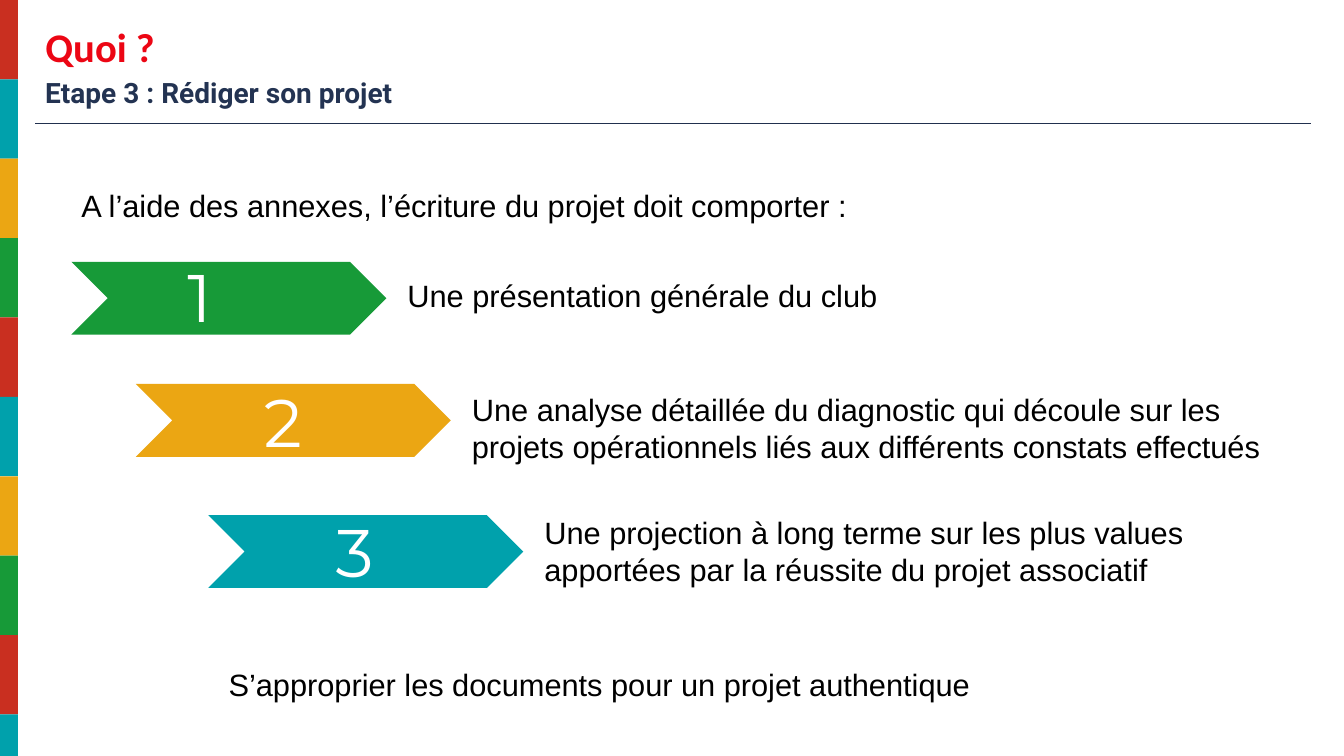
"""Build the slide on the third step: writing the club project."""
import pptx
import pptx.util
import pptx.dml.color
import pptx.enum.shapes
import pptx.enum.text

Pt = pptx.util.Pt
RGB = pptx.dml.color.RGBColor
Shape = pptx.enum.shapes.MSO_SHAPE
Anchor = pptx.enum.text.MSO_ANCHOR

RED = RGB(0xC9, 0x2F, 0x20)
TEAL = RGB(0x00, 0xA1, 0xAC)
GOLD = RGB(0xEB, 0xA6, 0x13)
GREEN = RGB(0x17, 0x9A, 0x38)
TITLE = RGB(0xEC, 0x06, 0x14)
NAVY = RGB(0x23, 0x33, 0x52)
RULE = RGB(0x21, 0x30, 0x4E)
BLACK = RGB(0, 0, 0)
WHITE = RGB(0xFF, 0xFF, 0xFF)


def block(kind, left, top, width, height, color):
    shape = slide.shapes.add_shape(kind, Pt(left), Pt(top), Pt(width), Pt(height))
    shape.shadow.inherit = False
    shape.fill.solid()
    shape.fill.fore_color.rgb = color
    shape.line.fill.background()


def write(box, left, top, width, height, text, font, size, color, bold=False, inset=7.2):
    box.left, box.top, box.width, box.height = Pt(left), Pt(top), Pt(width), Pt(height)
    frame = box.text_frame
    frame.word_wrap = True
    frame.auto_size = pptx.enum.text.MSO_AUTO_SIZE.NONE
    frame.margin_left = frame.margin_right = Pt(7.2)
    frame.margin_top = frame.margin_bottom = Pt(inset)
    frame.vertical_anchor = Anchor.TOP
    frame.text = text
    para = frame.paragraphs[0]
    para.alignment = pptx.enum.text.PP_ALIGN.LEFT
    para.font.name = font
    para.font.size = Pt(size)
    para.font.bold = bold
    para.font.color.rgb = color


deck = pptx.Presentation()
deck.slide_width, deck.slide_height = Pt(960), Pt(540)
slide = deck.slides.add_slide(deck.slide_layouts[5])
shapes = slide.shapes

band = 56.7
hues = [RED, TEAL, GOLD, GREEN]
for i in range(10):
    top = i * band
    block(Shape.RECTANGLE, -1.5, top, 14.3, min(band, 540 - top), hues[i % 4])

title = shapes.title
write(title, 25.2, 10, 911.5, 46.8, "Quoi ?", "Calibri", 29, TITLE, True, 3.6)
title.text_frame.vertical_anchor = Anchor.MIDDLE
box = shapes.add_textbox(0, 0, 0, 0)
write(box, 25.2, 50.4, 851, 31.7, "Etape 3 : Rédiger son projet", "Roboto", 20, NAVY, True, 3.6)

rule = shapes.add_connector(
    pptx.enum.shapes.MSO_CONNECTOR.STRAIGHT, Pt(25.2), Pt(88.5), Pt(936.7), Pt(88.5))
rule.line.color.rgb = RULE
rule.line.width = Pt(0.75)
rule._element.spPr.append(pptx.oxml.parse_xml(
    '<a:effectLst xmlns:a="http://schemas.openxmlformats.org/drawingml/2006/main"/>'))

notes = [
    (51.1, 126, "A l’aide des annexes, l’écriture du projet doit comporter :"),
    (156.2, 468, "S’approprier les documents pour un projet authentique"),
]
for left, top, text in notes:
    write(shapes.add_textbox(0, 0, 0, 0), left, top, 620, 41, text, "Arial", 22, BLACK)

steps = [
    (51, 187, GREEN, 126.7, 175, 190.8, 620, 41,
     "Une présentation générale du club"),
    (97, 274.3, GOLD, 181.4, 264.2, 272.2, 620, 67.7,
     "Une analyse détaillée du diagnostic qui découle sur les "
     "projets opérationnels liés aux différents constats effectués"),
    (148.8, 368, TEAL, 232.6, 357.1, 360, 555, 67.7,
     "Une projection à long terme sur les plus values "
     "apportées par la réussite du projet associatif"),
]
for i, (left, top, hue, x, y, line, width, height, text) in enumerate(steps, 1):
    block(Shape.CHEVRON, left, top, 225, 52, hue)
    write(shapes.add_textbox(0, 0, 0, 0), left + 233, line, width, height, text,
          "Arial", 22, BLACK)
    write(shapes.add_textbox(0, 0, 0, 0), x, y, 56.9, 72.7, str(i),
          "Montserrat", 48, WHITE)

deck.save("out.pptx")
